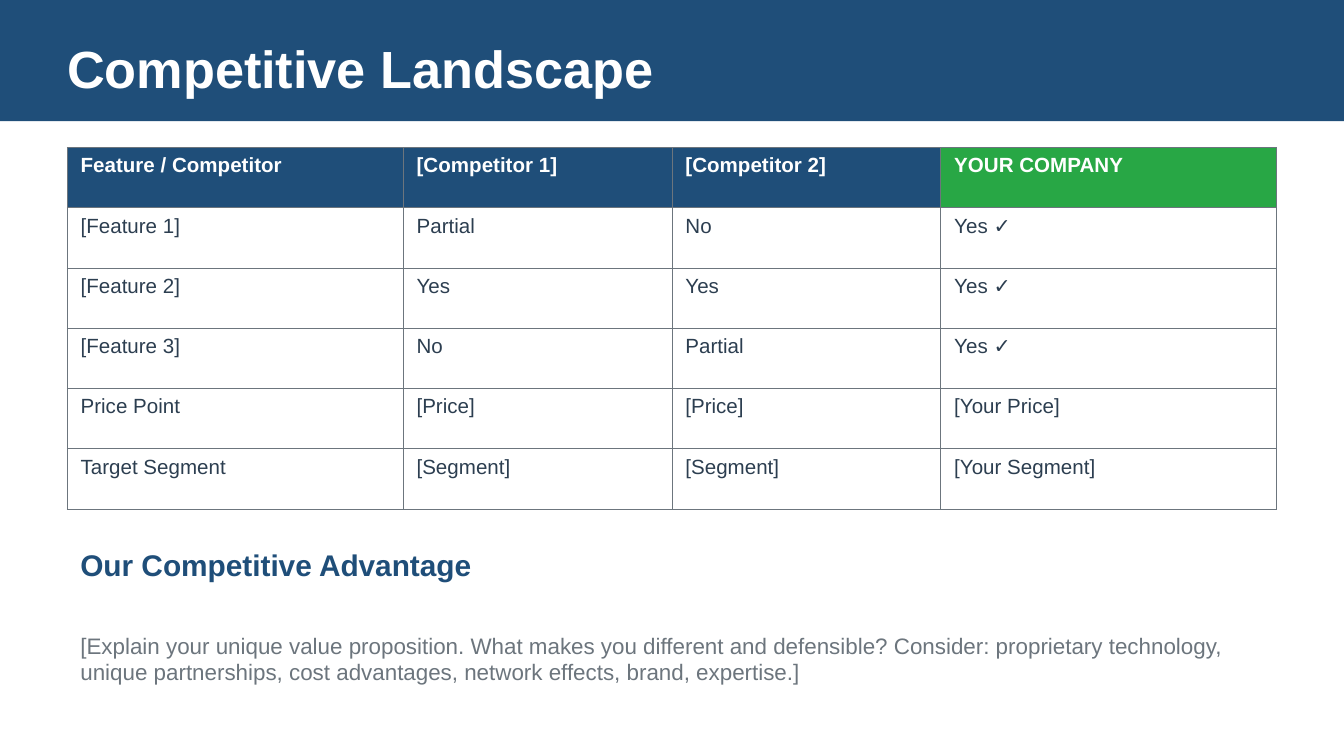
from pptx import Presentation
from pptx.dml.color import RGBColor
from pptx.enum.shapes import MSO_SHAPE
from pptx.enum.text import MSO_ANCHOR, MSO_AUTO_SIZE, PP_ALIGN
from pptx.oxml.ns import qn
from pptx.util import Cm, Pt
from lxml.etree import SubElement

NAVY, GREEN, GRAY, DARK, WHITE = "1F4E79", "28A745", "6C757D", "2C3E50", "FFFFFF"
LEFT, WIDTH = 1.27, 22.86
COLS = [6.35, 5.08, 5.08, 6.35]
ROW = 1.14
ROWS = [
    ["Feature / Competitor", "[Competitor 1]", "[Competitor 2]", "YOUR COMPANY"],
    ["[Feature 1]", "Partial", "No", "Yes ✓"],
    ["[Feature 2]", "Yes", "Yes", "Yes ✓"],
    ["[Feature 3]", "No", "Partial", "Yes ✓"],
    ["Price Point", "[Price]", "[Price]", "[Your Price]"],
    ["Target Segment", "[Segment]", "[Segment]", "[Your Segment]"],
]


def color(code):
    return RGBColor.from_string(code)


def write(frame, text, size, code, bold=False):
    frame.text = text
    para = frame.paragraphs[0]
    para.alignment = PP_ALIGN.LEFT
    font = para.runs[0].font
    style = {"name": "Arial", "size": Pt(size), "bold": bold}
    for key, value in style.items():
        setattr(font, key, value)
    font.color.rgb = color(code)


def add_band(slide):
    band = slide.shapes.add_shape(MSO_SHAPE.RECTANGLE, 0, 0, Cm(25.4), Cm(2.29))
    band.shadow.inherit = False
    band.fill.solid()
    band.fill.fore_color.rgb = color(NAVY)
    band.line.fill.background()
    # Send the band behind the title
    slide.shapes.title._element.addprevious(band._element)


def set_title(slide, text):
    title = slide.shapes.title
    place = {"left": LEFT, "top": 0.64, "width": WIDTH, "height": 1.27}
    for key, value in place.items():
        setattr(title, key, Cm(value))
    frame = title.text_frame
    inset = {f"margin_{side}": 0 for side in ("left", "top", "right", "bottom")}
    style = {"word_wrap": True, "auto_size": MSO_AUTO_SIZE.NONE,
             "vertical_anchor": MSO_ANCHOR.MIDDLE, **inset}
    for key, value in style.items():
        setattr(frame, key, value)
    write(frame, text, 28, WHITE, True)


def add_text(slide, top, height, text, size, code, bold=False):
    box = slide.shapes.add_textbox(Cm(LEFT), Cm(top), Cm(WIDTH), Cm(height))
    frame = box.text_frame
    frame.word_wrap = True
    frame.vertical_anchor = MSO_ANCHOR.MIDDLE
    write(frame, text, size, code, bold)


def set_edges(cell):
    props = cell._tc.get_or_add_tcPr()
    # Borders must come before the cell fill
    for spot, side in enumerate(("lnL", "lnR", "lnT", "lnB")):
        line = SubElement(props, qn(f"a:{side}"), w=str(Pt(0.5)))
        fill = SubElement(line, qn("a:solidFill"))
        SubElement(fill, qn("a:srgbClr"), val=GRAY)
        props.insert(spot, line)


def fill_cell(cell, text, head, last):
    if head:
        cell.fill.solid()
        cell.fill.fore_color.rgb = color(GREEN if last else NAVY)
    else:
        cell.fill.background()
    set_edges(cell)
    write(cell.text_frame, text, 11, WHITE if head else DARK, head)


def add_grid(slide):
    grid = slide.shapes.add_table(len(ROWS), len(COLS), Cm(LEFT), Cm(2.79),
                                  Cm(WIDTH), Cm(ROW * len(ROWS))).table
    grid.horz_banding = False
    for col, width in zip(grid.columns, COLS):
        col.width = Cm(width)
    for r, texts in enumerate(ROWS):
        grid.rows[r].height = Cm(ROW)
        for c, text in enumerate(texts):
            fill_cell(grid.cell(r, c), text, r == 0, c == len(COLS) - 1)


def main():
    deck = Presentation()
    deck.slide_width, deck.slide_height = Cm(25.4), Cm(14.29)
    slide = deck.slides.add_slide(deck.slide_layouts[5])

    # Header
    set_title(slide, "Competitive Landscape")
    add_band(slide)

    # Comparison table
    add_grid(slide)

    # Advantage statement
    add_text(slide, 10.16, 1.02, "Our Competitive Advantage", 16, NAVY, True)
    add_text(slide, 11.18, 2.54,
             "[Explain your unique value proposition. What makes you different "
             "and defensible? Consider: proprietary technology, unique "
             "partnerships, cost advantages, network effects, brand, expertise.]",
             12, GRAY)
    deck.save("out.pptx")


if __name__ == "__main__":
    main()
